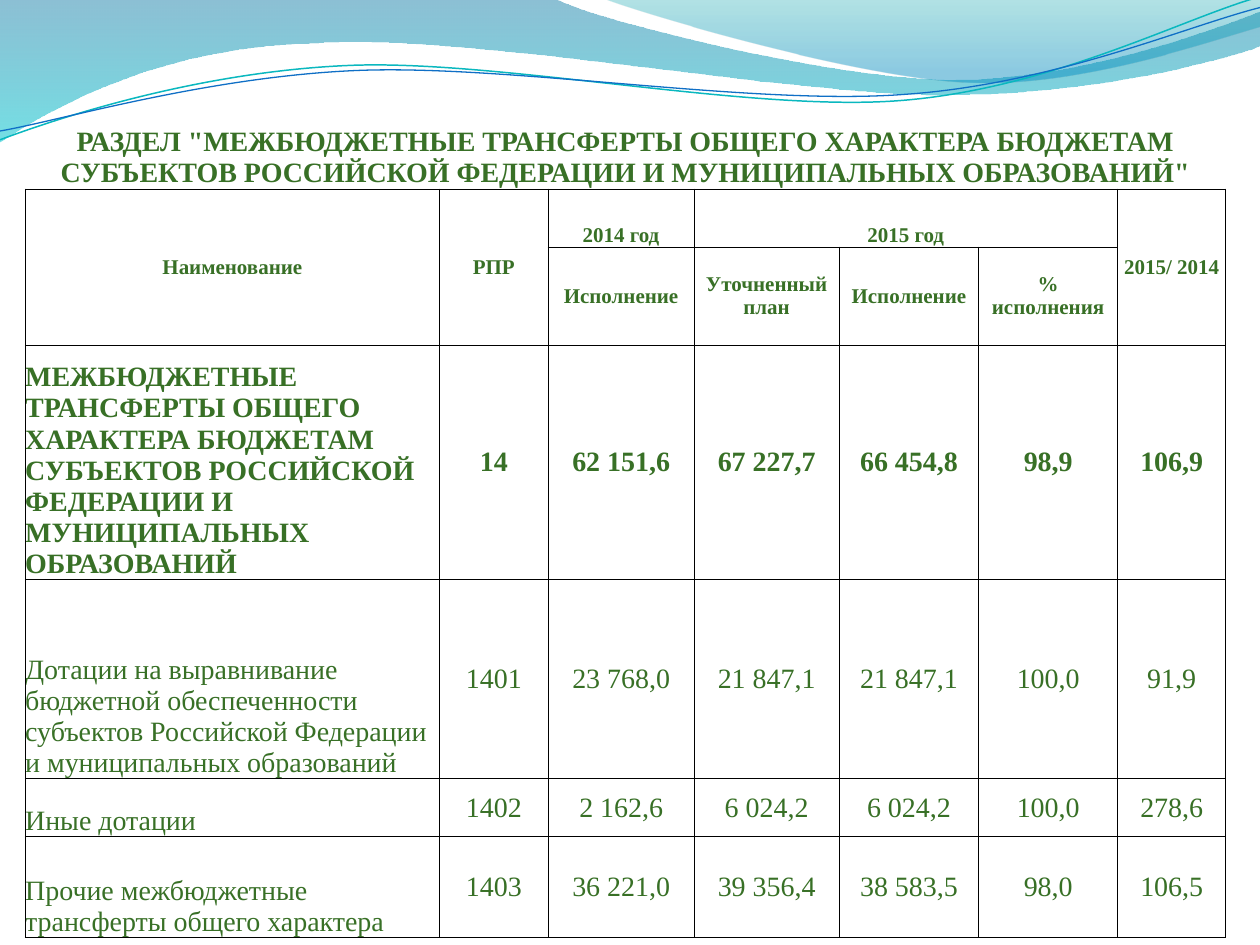
from dataclasses import dataclass

from lxml import etree
from pptx import Presentation
from pptx import util as u
from pptx.dml.color import RGBColor
from pptx.enum import text
from pptx.oxml.ns import qn


@dataclass(frozen=True)
class Theme:
    font: str = "Times New Roman"
    ink: str = "387026"
    border: str = "000000"
    border_width: float = 0.5
    body_size: int = 16
    header_size: int = 12


THEME = Theme()
SLIDE_WIDTH, SLIDE_HEIGHT = u.Inches(10), u.Inches(7.5)
WAVE_COLUMNS = 10
UNITS_PER_COLUMN = 100
GRADIENT_DOWN = 270

BANDS = [
    ([(0, 0)],
     [[(4.4, -0.01)],
      [(4.76, 0.17), (6.64, 0.63), (7.58, 0.63)],
      [(8.53, 0.63), (9.58, 0.26), (10, 0.09)],
      [(10.01, 0.36)],
      [(9.83, 0.44), (8.7, 0.76), (7.46, 0.75)],
      [(6.22, 0.75), (3.82, 0.28), (2.57, 0.34)],
      [(1.29, 0.36), (0.46, 0.83), (-0.01, 1.13)]],
     [(0, "0074A1", 45), (1, "00C6CF", 55)]),
    ([(4.79, -0.01)],
     [[(5.09, 0.11), (6.82, 0.62), (7.69, 0.65)],
      [(8.56, 0.69), (9.61, 0.32), (10, 0.21)],
      [(10, 0)]],
     [(0, "00A1A9", 30), (0.8, "008BBF", 45)]),
]
STRANDS = [
    ([(0, 1.11)],
     [[(0.48, 0.93), (1.58, 0.57), (2.77, 0.52)],
      [(3.95, 0.47), (5.93, 0.89), (7.13, 0.8)],
      [(8.33, 0.71), (9.38, 0.15), (9.98, -0.02)]],
     "0AB8BF", 0.85),
    ([(0, 1.04)],
     [[(0.47, 0.96), (1.64, 0.61), (2.83, 0.56)],
      [(4.03, 0.51), (5.97, 0.84), (7.17, 0.75)],
      [(8.36, 0.67), (9.41, 0.21), (10, 0.06)]],
     "0F6FC6", 0.75),
]

COLUMN_WIDTHS = [3.29, 0.86, 1.16, 1.15, 1.11, 1.1, 0.86]
ROW_HEIGHTS = [1.21, 0.46, 0.78, 1.86, 1.58, 0.46, 0.8]
TITLE_ROW, YEAR_ROW, MEASURE_ROW, TOTAL_ROW = range(4)
MERGES = [((0, 0), (0, 6)), ((1, 0), (2, 0)), ((1, 1), (2, 1)),
          ((1, 3), (1, 5)), ((1, 6), (2, 6))]
SECTION = ("МЕЖБЮДЖЕТНЫЕ ТРАНСФЕРТЫ ОБЩЕГО ХАРАКТЕРА БЮДЖЕТАМ СУБЪЕКТОВ "
           "РОССИЙСКОЙ ФЕДЕРАЦИИ И МУНИЦИПАЛЬНЫХ ОБРАЗОВАНИЙ")
BUDGET = [
    [f'РАЗДЕЛ "{SECTION}"'] + [""] * 6,
    ["Наименование", "РПР", "2014 год", "2015 год", "", "", "2015/ 2014"],
    ["", "", "Исполнение", "Уточненный план", "Исполнение", "% исполнения", ""],
    [SECTION, "14", "62 151,6", "67 227,7", "66 454,8", "98,9", "106,9"],
    ["Дотации на выравнивание бюджетной обеспеченности субъектов "
     "Российской Федерации и муниципальных образований",
     "1401", "23 768,0", "21 847,1", "21 847,1", "100,0", "91,9"],
    ["Иные дотации", "1402", "2 162,6", "6 024,2", "6 024,2", "100,0", "278,6"],
    ["Прочие межбюджетные трансферты общего характера",
     "1403", "36 221,0", "39 356,4", "38 583,5", "98,0", "106,5"],
]


def bend(outline, segments):
    edges = list(outline._element.iter(qn("a:lnTo")))
    for segment in segments:
        corners, edges = edges[:len(segment)], edges[len(segment):]
        if len(segment) == 3:
            curve = etree.Element(qn("a:cubicBezTo"))
            corners[0].addprevious(curve)
            for corner in corners:
                curve.append(corner[0])
                corner.getparent().remove(corner)


def draw_outline(slide, box, start, segments, close):
    left, top, width, _ = box
    points = [(round(x * UNITS_PER_COLUMN), round(y * UNITS_PER_COLUMN))
              for part in [start, *segments] for x, y in part]
    scale = width / (WAVE_COLUMNS * UNITS_PER_COLUMN)
    builder = slide.shapes.build_freeform(*points[0], scale=scale)
    builder.add_line_segments(points[1:], close=close)
    outline = builder.convert_to_shape(left, top)
    bend(outline, segments)
    outline.shadow.inherit = False
    return outline


def add_waves(slide, box):
    for start, segments, stops in BANDS:
        band = draw_outline(slide, box, start, segments, True)
        band.line.fill.background()
        band.fill.gradient()
        band.fill.gradient_angle = GRADIENT_DOWN
        for stop, (position, colour, _) in zip(band.fill.gradient_stops, stops):
            stop.position = position
            stop.color.rgb = RGBColor.from_string(colour)
        colours = list(band._element.spPr.iter(qn("a:srgbClr")))
        for colour, (_, _, opacity) in zip(colours, stops):
            etree.SubElement(colour, qn("a:alpha"), val=str(opacity * 1000))
    for start, segments, colour, width in STRANDS:
        strand = draw_outline(slide, box, start, segments, False)
        strand.fill.background()
        strand.line.color.rgb = RGBColor.from_string(colour)
        strand.line.width = u.Pt(width)


def set_borders(cell, visible):
    properties = cell._tc.get_or_add_tcPr()
    for side in "LRTB":
        edge = etree.SubElement(properties, qn(f"a:ln{side}"),
                                w=str(u.Pt(THEME.border_width)))
        if side in visible:
            paint = etree.SubElement(edge, qn("a:solidFill"))
            etree.SubElement(paint, qn("a:srgbClr"), val=THEME.border)
        else:
            etree.SubElement(edge, qn("a:noFill"))


def format_cell(cell, row, column, words):
    cell.margin_left = cell.margin_right = cell.margin_top = cell.margin_bottom = 0
    set_borders(cell, "B" if row == TITLE_ROW else "LRTB")
    cell.fill.background()
    is_name = row >= TOTAL_ROW and column == 0
    is_year = row == YEAR_ROW and 2 <= column <= 5
    at_bottom = row == TITLE_ROW or is_name or is_year
    cell.vertical_anchor = text.MSO_ANCHOR.BOTTOM if at_bottom else text.MSO_ANCHOR.MIDDLE
    cell.text = words
    paragraph = cell.text_frame.paragraphs[0]
    paragraph.alignment = text.PP_ALIGN.LEFT if is_name else text.PP_ALIGN.CENTER
    font = paragraph.font
    font.name = THEME.font
    font.bold = row <= TOTAL_ROW
    is_header = row in (YEAR_ROW, MEASURE_ROW)
    font.size = u.Pt(THEME.header_size if is_header else THEME.body_size)
    font.color.rgb = RGBColor.from_string(THEME.ink)


def add_budget_table(slide, box):
    _, _, width, height = box
    table = slide.shapes.add_table(len(ROW_HEIGHTS), len(COLUMN_WIDTHS), *box).table
    table.first_row = table.horz_banding = False
    for column, share in zip(table.columns, COLUMN_WIDTHS):
        column.width = int(width * share / sum(COLUMN_WIDTHS))
    for row, share in zip(table.rows, ROW_HEIGHTS):
        row.height = int(height * share / sum(ROW_HEIGHTS))
    for row, entries in enumerate(BUDGET):
        for column, words in enumerate(entries):
            format_cell(table.cell(row, column), row, column, words)
    for first, last in MERGES:
        table.cell(*first).merge(table.cell(*last))


def main():
    deck = Presentation()
    deck.slide_width, deck.slide_height = SLIDE_WIDTH, SLIDE_HEIGHT
    slide = deck.slides.add_slide(deck.slide_layouts[6])
    add_waves(slide, (0, 0, SLIDE_WIDTH, int(SLIDE_HEIGHT * 0.15)))
    add_budget_table(slide, (u.Inches(0.2), u.Inches(0.29), u.Inches(9.53), u.Inches(7.15)))
    deck.save("out.pptx")


if __name__ == "__main__":
    main()
